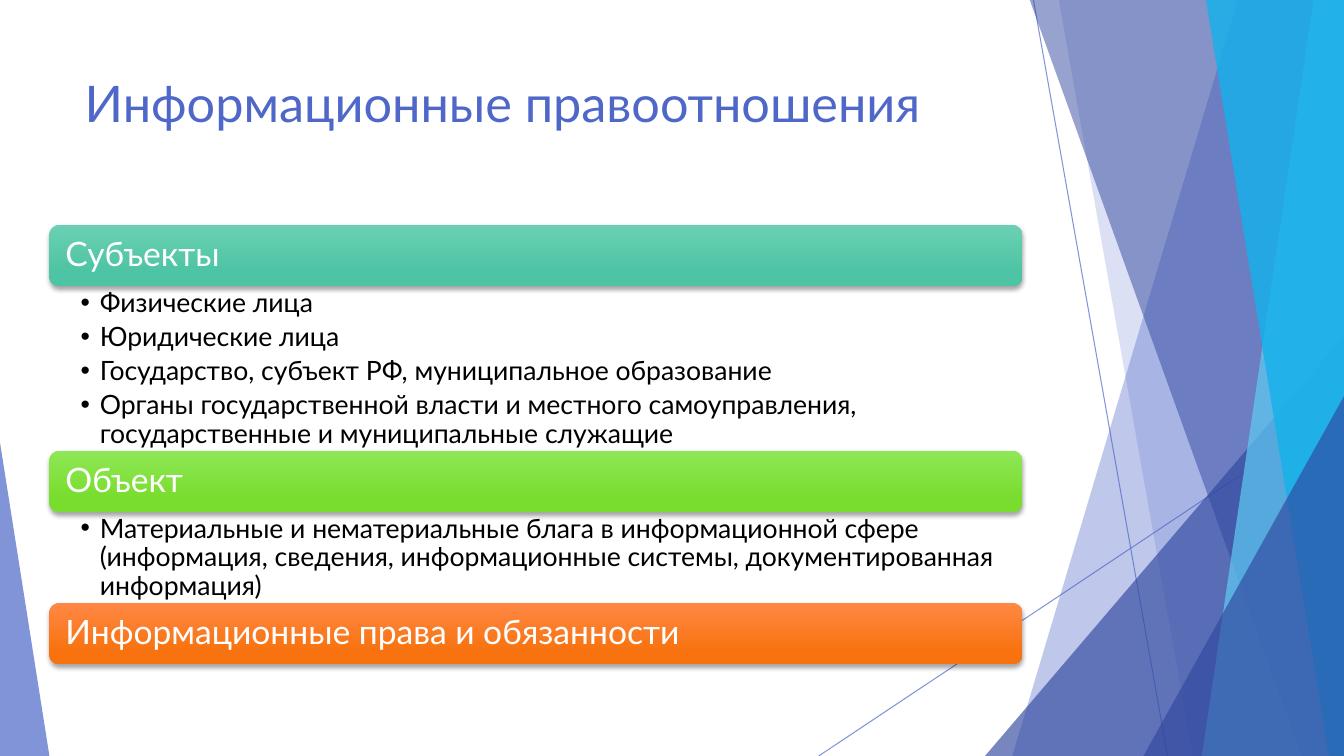
"""Build the slide on information legal relations: three headed bars with lists."""
from dataclasses import dataclass

from lxml.etree import SubElement
from pptx import Presentation
from pptx.dml.color import RGBColor
from pptx.enum.shapes import MSO_CONNECTOR as CONN, MSO_SHAPE as SHAPE
from pptx.enum.text import MSO_ANCHOR as ANCHOR, MSO_AUTO_SIZE as FIT, PP_ALIGN as ALIGN
from pptx.oxml.ns import qn
from pptx.util import Pt

TITLE = "Информационные правоотношения"
SECTIONS = [
    ("Субъекты", ("6BD0B3", "4DC4A4"), 163, [
        "Физические лица",
        "Юридические лица",
        "Государство, субъект РФ, муниципальное образование",
        "Органы государственной власти и местного самоуправления, "
        "государственные и муниципальные служащие",
    ]),
    ("Объект", ("8EE755", "79DD2F"), 90, [
        "Материальные и нематериальные блага в информационной сфере (информация, "
        "сведения, информационные системы, документированная информация)",
    ]),
    ("Информационные права и обязанности", ("FF8845", "F87310"), 0, []),
]


@dataclass(frozen=True)
class Theme:
    font: str = "Lato"
    blue: str = "4E67C8"
    navy: str = "31489F"
    sky: str = "5ECCF3"
    cyan: str = "12B2EB"
    white: str = "FFFFFF"
    black: str = "000000"
    title: int = 36
    heading: int = 24
    body: int = 19


T = Theme()
PX = 9144
WIDTH, HEIGHT = 1333, 750
BAR_LEFT, BAR_TOP, BAR_WIDTH, BAR_HEIGHT = 49, 223, 965, 61
HANG = 19

RAYS = [((1025, 0), (1158, HEIGHT)), ((WIDTH, 403), (812, HEIGHT))]
FACETS = [
    ("band", (1228, 1004), T.blue, 36),
    ("band", (1050, 1183), T.blue, 20),
    ("triangle", (977, 333, 356, 1), T.navy, 66),
    ("band", (1021, 1291), T.navy, 50),
    ("band", (1303, 1192), T.sky, 70),
    ("band", (1196, 1318), T.cyan, 80),
    ("triangle", (1134, 393, 199, 1), T.navy, 66),
    ("triangle", (0, 439, 49, 0), T.blue, 70),
]


def px(*lengths):
    return [round(n * PX) for n in lengths]


def rgb(code):
    return RGBColor.from_string(code)


def set_alpha(parent, percent):
    for color in parent.iter(qn("a:srgbClr")):
        SubElement(color, qn("a:alpha"), val=str(percent * 1000))


def write(tf, lines, size, color, margins=(10, 5, 10, 5), anchor=ANCHOR.TOP,
          spacing=0.9, after=0, bullet=None):
    tf.word_wrap = True
    tf.auto_size = FIT.NONE
    tf.vertical_anchor = anchor
    tf.margin_left, tf.margin_top, tf.margin_right, tf.margin_bottom = px(*margins)
    for i, line in enumerate(lines):
        p = tf.add_paragraph() if i else tf.paragraphs[0]
        if bullet:
            pPr = p._p.get_or_add_pPr()
            pPr.set("marL", str(HANG * PX))
            pPr.set("indent", str(-HANG * PX))
            SubElement(pPr, qn("a:buFont"), typeface="Arial")
            SubElement(pPr, qn("a:buChar"), char=bullet)
        p.alignment = ALIGN.LEFT
        p.line_spacing = spacing
        p.space_before, p.space_after = Pt(0), Pt(after)
        r = p.add_run()
        r.text = line
        r.font.name, r.font.size = T.font, Pt(size)
        r.font.color.rgb = rgb(color)


def place(shapes, sp, *box):
    sp.left, sp.top, sp.width, sp.height = px(*box)
    shapes._spTree.append(sp._element)


def add_ray(shapes, start, end):
    line = shapes.add_connector(CONN.STRAIGHT, *px(*start, *end))
    line.line.color.rgb = rgb(T.blue)
    line.line.width = Pt(0.75)
    spPr = line._element.spPr
    set_alpha(spPr, 70)
    SubElement(spPr, qn("a:effectLst"))


def add_facet(shapes, kind, geometry, color, alpha):
    if kind == "band":
        top_x, bottom_x = geometry
        outline = shapes.build_freeform(top_x, -1, scale=PX)
        outline.add_line_segments([(WIDTH, -1), (WIDTH, HEIGHT), (bottom_x, HEIGHT)])
        sp = outline.convert_to_shape()
    else:
        x, y, width, apex = geometry
        sp = shapes.add_shape(SHAPE.ISOSCELES_TRIANGLE, *px(x, y, width, HEIGHT - y))
        sp.adjustments[0] = apex
    sp.shadow.inherit = False
    sp.fill.solid()
    sp.fill.fore_color.rgb = rgb(color)
    sp.line.fill.background()
    set_alpha(sp._element.spPr, alpha)


def add_bar(shapes, heading, colors, top):
    sp = shapes.add_shape(SHAPE.ROUNDED_RECTANGLE,
                          *px(BAR_LEFT, top, BAR_WIDTH, BAR_HEIGHT))
    sp.fill.gradient()
    sp.fill.gradient_angle = 270
    for stop, color, position in zip(sp.fill.gradient_stops, colors, (0, 0.78)):
        stop.color.rgb = rgb(color)
        stop.position = position
    sp.line.fill.background()
    sp.shadow.inherit = False
    effects = sp._element.spPr.find(qn("a:effectLst"))
    shadow = SubElement(effects, qn("a:outerShdw"), blurRad=str(Pt(3)), dist=str(Pt(2)),
                        dir="5400000", algn="ctr", rotWithShape="0")
    SubElement(shadow, qn("a:srgbClr"), val=T.black)
    set_alpha(effects, 35)
    write(sp.text_frame, [heading], T.heading, T.white, margins=(13, 10, 13, 10),
          anchor=ANCHOR.MIDDLE)


def main():
    prs = Presentation()
    prs.slide_width, prs.slide_height = px(WIDTH, HEIGHT)
    slide = prs.slides.add_slide(prs.slide_layouts[3])
    shapes = slide.shapes
    title, *lists = slide.placeholders

    for start, end in RAYS:
        add_ray(shapes, start, end)
    for facet in FACETS:
        add_facet(shapes, *facet)

    place(shapes, title, 74, 67, 940, 144)
    write(title.text_frame, [TITLE], T.title, T.blue, spacing=1.0)

    top = BAR_TOP
    for heading, colors, list_height, items in SECTIONS:
        add_bar(shapes, heading, colors, top)
        top += BAR_HEIGHT
        if items:
            body = lists.pop(0)
            place(shapes, body, BAR_LEFT, top, BAR_WIDTH, list_height)
            write(body.text_frame, items, T.body, T.black, margins=(31, 3, 19, 3),
                  after=3.8, bullet="•")
        top += list_height

    prs.save("out.pptx")


if __name__ == "__main__":
    main()
